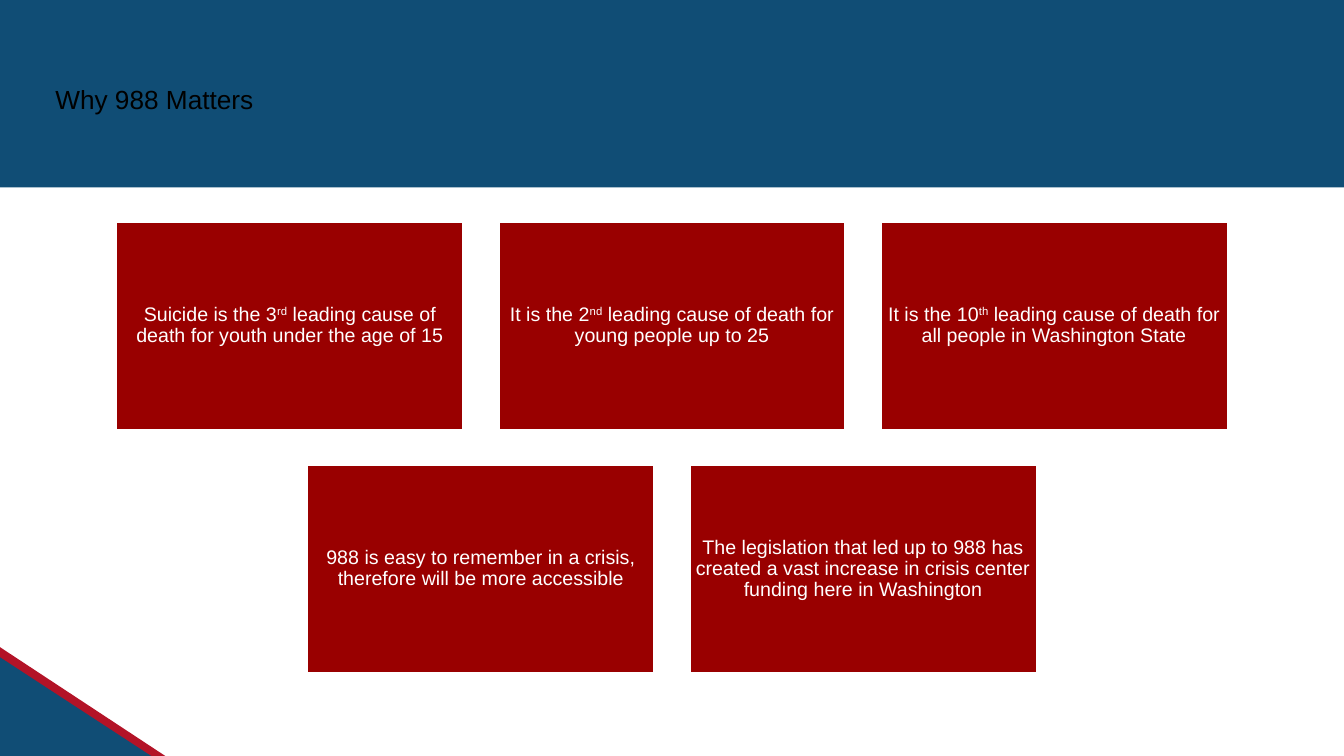
from pptx import Presentation
from pptx.dml.color import RGBColor
from pptx.enum.shapes import MSO_SHAPE
from pptx.enum.text import MSO_ANCHOR, PP_ALIGN
from pptx.util import Inches, Pt

RECTANGLE = MSO_SHAPE.RECTANGLE
TRIANGLE = MSO_SHAPE.RIGHT_TRIANGLE
MIDDLE = MSO_ANCHOR.MIDDLE
TOP = MSO_ANCHOR.TOP
CENTER = PP_ALIGN.CENTER

NAVY, RED, DARK_RED = "104D75", "B31327", "990000"
BLACK, WHITE = "000000", "FFFFFF"

SLIDE_W, SLIDE_H = 13.33, 7.5
CARD_W, CARD_H = 3.45, 2.07
STEP_X, STEP_Y = 3.79, 2.41
CARDS_TOP = 2.2

# Each card is a list of runs; every second run is an ordinal suffix.
CARD_ROWS = [
    [
        ["Suicide is the 3", "rd", " leading cause of death for youth under the age of 15"],
        ["It is the 2", "nd", " leading cause of death for young people up to 25"],
        ["It is the 10", "th", " leading cause of death for all people in Washington State"],
    ],
    [
        ["988 is easy to remember in a crisis, therefore will be more accessible"],
        ["The legislation that led up to 988 has created a vast increase in crisis "
         "center funding here in Washington"],
    ],
]


def color(hex_value):
    return RGBColor.from_string(hex_value)


def add_filled(kind, left, top, width, height, fill):
    """Add a preset shape with a plain fill, no outline and no shadow."""
    shape = slide.shapes.add_shape(
        kind, Inches(left), Inches(top), Inches(width), Inches(height))
    shape.shadow.inherit = False
    shape.fill.solid()
    shape.fill.fore_color.rgb = color(fill)
    shape.line.fill.background()
    return shape


prs = Presentation()
prs.slide_width = Inches(SLIDE_W)
prs.slide_height = Inches(SLIDE_H)
slide = prs.slides.add_slide(prs.slide_layouts[6])

# Header band and corner accent
add_filled(RECTANGLE, 0, 0, SLIDE_W, 1.86, NAVY)
for width, height, fill in [(1.64, 1.08, RED), (1.5, 0.98, NAVY)]:
    add_filled(TRIANGLE, 0, SLIDE_H - height, width, height, fill)

# Title
title = slide.shapes.add_textbox(Inches(0.45), Inches(0.73), Inches(12.42), Inches(0.91))
title_frame = title.text_frame
title_frame.word_wrap = True
title_frame.vertical_anchor = TOP
title_frame.margin_left = title_frame.margin_right = Inches(0.1)
title_frame.margin_top = title_frame.margin_bottom = Inches(0.1)
title_frame.text = "Why 988 Matters"
title_font = title_frame.paragraphs[0].runs[0].font
title_font.name = "Arial"
title_font.size = Pt(18.7)
title_font.color.rgb = color(BLACK)

# Cards, each row centred on the slide
for row, cards in enumerate(CARD_ROWS):
    row_width = STEP_X * (len(cards) - 1) + CARD_W
    row_left = (SLIDE_W - row_width) / 2
    for column, parts in enumerate(cards):
        card = add_filled(RECTANGLE, row_left + column * STEP_X,
                          CARDS_TOP + row * STEP_Y, CARD_W, CARD_H, DARK_RED)
        card.line.color.rgb = color(WHITE)
        card.line.width = Pt(2)
        frame = card.text_frame
        frame.word_wrap = True
        frame.vertical_anchor = MIDDLE
        frame.margin_left = frame.margin_right = Inches(0.06)
        frame.margin_top = frame.margin_bottom = Inches(0.06)
        reason = frame.paragraphs[0]
        reason.alignment = CENTER
        reason.line_spacing = 0.9
        reason.space_after = Pt(4.9)
        for index, part in enumerate(parts):
            run = reason.add_run()
            run.text = part
            run.font.name = "Arial"
            run.font.size = Pt(14)
            run.font.color.rgb = color(WHITE)
            if index % 2:
                run.font._element.set("baseline", "30000")

prs.save("out.pptx")
